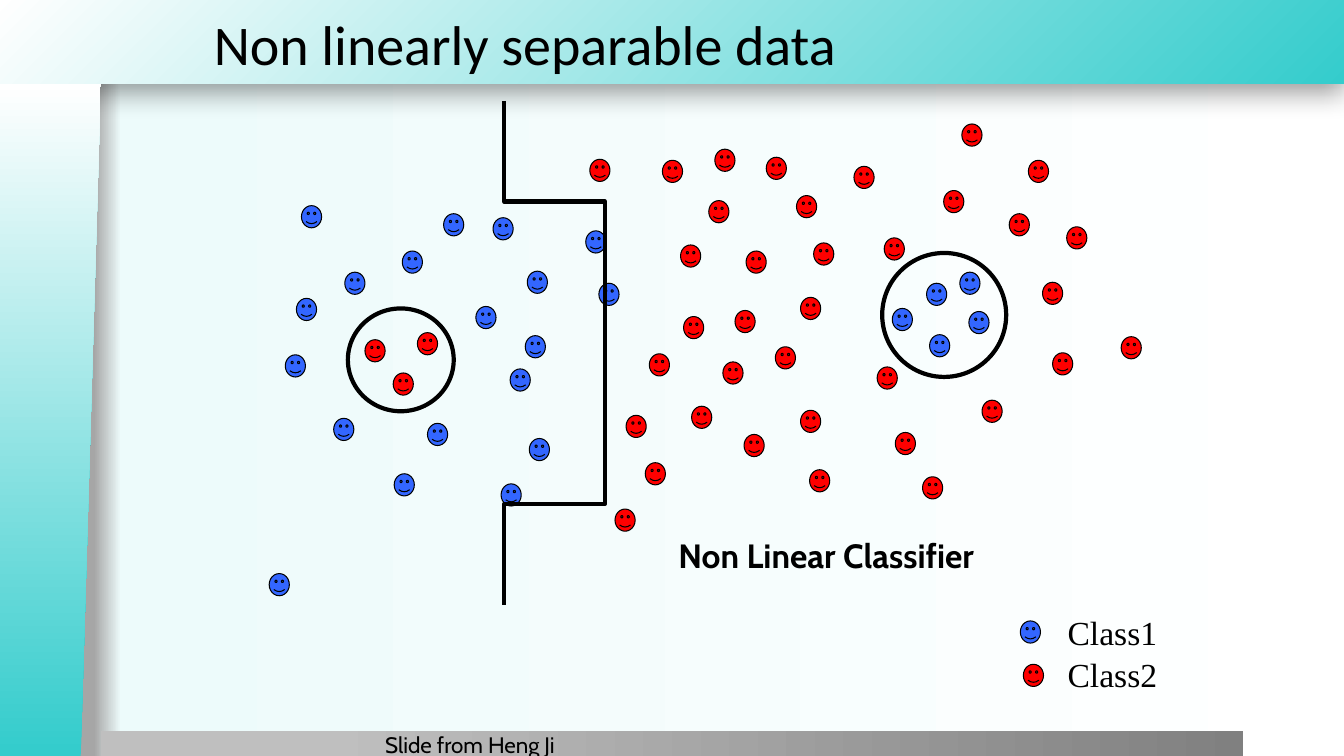
from lxml.etree import SubElement as Sub
from pptx import Presentation
from pptx.dml.color import RGBColor as RGB
from pptx.enum.shapes import MSO_SHAPE as Shape
from pptx.enum.text import MSO_ANCHOR as Anchor, PP_ALIGN as Align
from pptx.oxml.ns import qn
from pptx.util import Inches, Pt

# Content
TITLE = "Non linearly separable data"
NOTE = "Non Linear Classifier"
CREDIT = "Slide from Heng Ji"
KEY = [("Class1", "blue", 10.12, 6.16, 6.02), ("Class2", "red", 10.15, 6.59, 6.44)]
FACES = {
    "blue": [
        (3.99, 2.49), (4.4, 2.12), (4.89, 2.16), (3.31, 4.15), (2.94, 2.96),
        (5.23, 2.69), (3.91, 4.7), (2.99, 2.04), (3.42, 2.7), (2.83, 3.52),
        (5.21, 3.33), (4.97, 4.8), (5.06, 3.66), (5.94, 2.81), (5.25, 4.35),
        (4.24, 4.2), (4.72, 3.04), (2.67, 5.69), (9.19, 2.81), (9.22, 3.32),
        (9.61, 3.09), (9.52, 2.7), (8.85, 3.06), (5.81, 2.29)],
    "red": [
        (6.44, 3.51), (6.57, 1.59), (7.03, 1.99), (7.09, 1.48), (7.6, 1.56),
        (6.78, 3.14), (6.75, 2.43), (9.36, 1.89), (7.29, 3.08), (7.94, 2.95),
        (9.54, 1.23), (7.4, 2.49), (8.07, 2.41), (7.17, 3.59), (7.69, 3.44),
        (10.34, 2.8), (8.77, 2.36), (10.01, 2.12), (8.7, 3.64), (10.2, 1.59),
        (7.9, 1.94), (6.86, 4.03), (6.4, 4.59), (6.1, 5.05), (5.85, 1.58),
        (4.14, 3.3), (3.62, 3.37), (7.94, 4.07), (8.88, 4.29), (9.74, 3.97),
        (10.44, 3.5), (10.58, 2.25), (11.12, 3.34), (3.9, 3.7), (8.47, 1.65),
        (7.38, 4.31), (8.03, 4.66), (9.15, 4.73), (6.21, 4.12)],
}
RINGS = [(3.45, 3.06, 1.05, 1.02), (8.75, 2.51, 1.23, 1.23)]
CURVE = [  # cubic arcs: start, two handles, end
    [(4.59, 1.47), (5.45, 1.74), (6.31, 2.02), (6.41, 2.74)],
    [(6.41, 2.74), (6.52, 3.45), (5.4, 5.25), (5.2, 5.75)]]
STEPS = 40

# Theme
THEME = {
    "blue": "3366FF", "red": "FF0000", "ink": "000000",
    "page": [(7, "A6A6A6"), (9, "EDFBFB"), (100, "FFFFFF")],
    "band": [(0, "34CCCC"), (100, "FFFFFF")],
    "side": [(1, "34CCCC"), (100, "FFFFFF")],
    "foot": [(20, "BFBFBF"), (100, "808080")],
    "title": {"name": "Calibri", "size": Pt(40)},
    "note": {"name": "Cabin", "size": Pt(24), "bold": True},
    "key": {"name": "Times New Roman", "size": Pt(24)},
    "credit": {"name": "Cabin", "size": Pt(16)},
    "thin": 0.75, "thick": 3,
}


def box(*nums):
    return [Inches(n) for n in nums]


def grade(owner, fill, stops, corner=False):
    """Fill with colour stops, left to right or out from the lower right corner."""
    fill.gradient()
    grad = owner.element.find(".//" + qn("a:gradFill"))
    for child in list(grad):
        grad.remove(child)
    row = Sub(grad, qn("a:gsLst"))
    for pos, tone in stops:
        stop = Sub(row, qn("a:gs"), pos=str(pos * 1000))
        Sub(stop, qn("a:srgbClr"), val=tone)
    if corner:
        way = Sub(grad, qn("a:path"), path="circle")
        Sub(way, qn("a:fillToRect"), l="100000", t="100000")
    else:
        Sub(grad, qn("a:lin"), ang="0", scaled="0")


def line(shape, width):
    shape.shadow.inherit = False
    shape.line.color.rgb = RGB.from_string(THEME["ink"])
    shape.line.width = Pt(width)


def panel(kind, place, stops, corner=False):
    shape = slide.shapes.add_shape(kind, *box(*place))
    shape.shadow.inherit = False
    shape.line.fill.background()
    grade(shape, shape.fill, stops, corner)
    return shape


def face(home, tone, left, top):
    shape = home.shapes.add_shape(Shape.SMILEY_FACE, *box(left, top, 0.2, 0.22))
    shape.adjustments[0] = 0.047
    shape.fill.solid()
    shape.fill.fore_color.rgb = RGB.from_string(THEME[tone])
    line(shape, THEME["thin"])


def write(shape, text, style):
    frame = shape.text_frame
    frame.word_wrap = True
    frame.text = text
    para = frame.paragraphs[0]
    para.alignment = Align.LEFT
    font = para.runs[0].font
    for name, value in THEME[style].items():
        setattr(font, name, value)
    font.color.rgb = RGB.from_string(THEME["ink"])
    return frame


def label(home, place, text, style):
    return write(home.shapes.add_textbox(*box(*place)), text, style)


def bezier(arc, t):
    parts = [(1 - t) ** 3, 3 * t * (1 - t) ** 2, 3 * t * t * (1 - t), t ** 3]
    return tuple(sum(p * pt[i] for p, pt in zip(parts, arc)) for i in (0, 1))


deck = Presentation()
deck.slide_width, deck.slide_height = box(13.33, 7.5)
slide = deck.slides.add_slide(deck.slide_layouts[5])

# Backdrop
grade(slide, slide.background.fill, THEME["page"])
band = panel(Shape.RECTANGLE, (-0.01, 0, 13.34, 0.83), THEME["band"], True)
shade = Sub(band.element.spPr.find(qn("a:effectLst")), qn("a:outerShdw"),
            blurRad=str(Pt(20)), dist=str(Pt(6)), dir="5400000", rotWithShape="0")
Sub(Sub(shade, qn("a:srgbClr"), val=THEME["ink"]), qn("a:alpha"), val="40000")
panel(Shape.RECTANGLE, (1, 7.25, 11.33, 0.26), THEME["foot"])
side = panel(Shape.FLOWCHART_MANUAL_INPUT, (-2.84, 3.67, 6.68, 1), THEME["side"])
side.rotation = 270
side.element.spPr.find(qn("a:xfrm")).set("flipV", "1")

# Title, raised above the band
title = slide.shapes.title
title.left, title.top, title.width, title.height = box(2.02, 0.01, 9.61, 0.83)
write(title, TITLE, "title").vertical_anchor = Anchor.MIDDLE
slide.shapes.element.append(title.element)

# Scatter of faces
plot = slide.shapes.add_group_shape()
for tone, spots in FACES.items():
    for spot in spots:
        face(plot, tone, *spot)

# Class border and rings
points = [CURVE[0][0]] + [bezier(arc, n / STEPS) for arc in CURVE
                          for n in range(1, STEPS + 1)]
path = plot.shapes.build_freeform(*points[0], scale=Inches(1))
path.add_line_segments(points[1:], close=False)
marks = [path.convert_to_shape()]
marks += [plot.shapes.add_shape(Shape.OVAL, *box(*ring)) for ring in RINGS]
for mark in marks:
    mark.fill.background()
    line(mark, THEME["thick"])
label(plot, (6.63, 5.26, 3.66, 0.5), NOTE, "note")

# Key
key = slide.shapes.add_group_shape()
for name, tone, left, top, base in KEY:
    label(key, (10.49, base, 1.18, 0.5), name, "key")
    face(key, tone, left, top)

# Credit
credit = label(slide, (3.82, 7.25, 1.79, 0.22), CREDIT, "credit")
for edge in ("left", "top", "right", "bottom"):
    setattr(credit, "margin_" + edge, 0)

deck.save("out.pptx")
